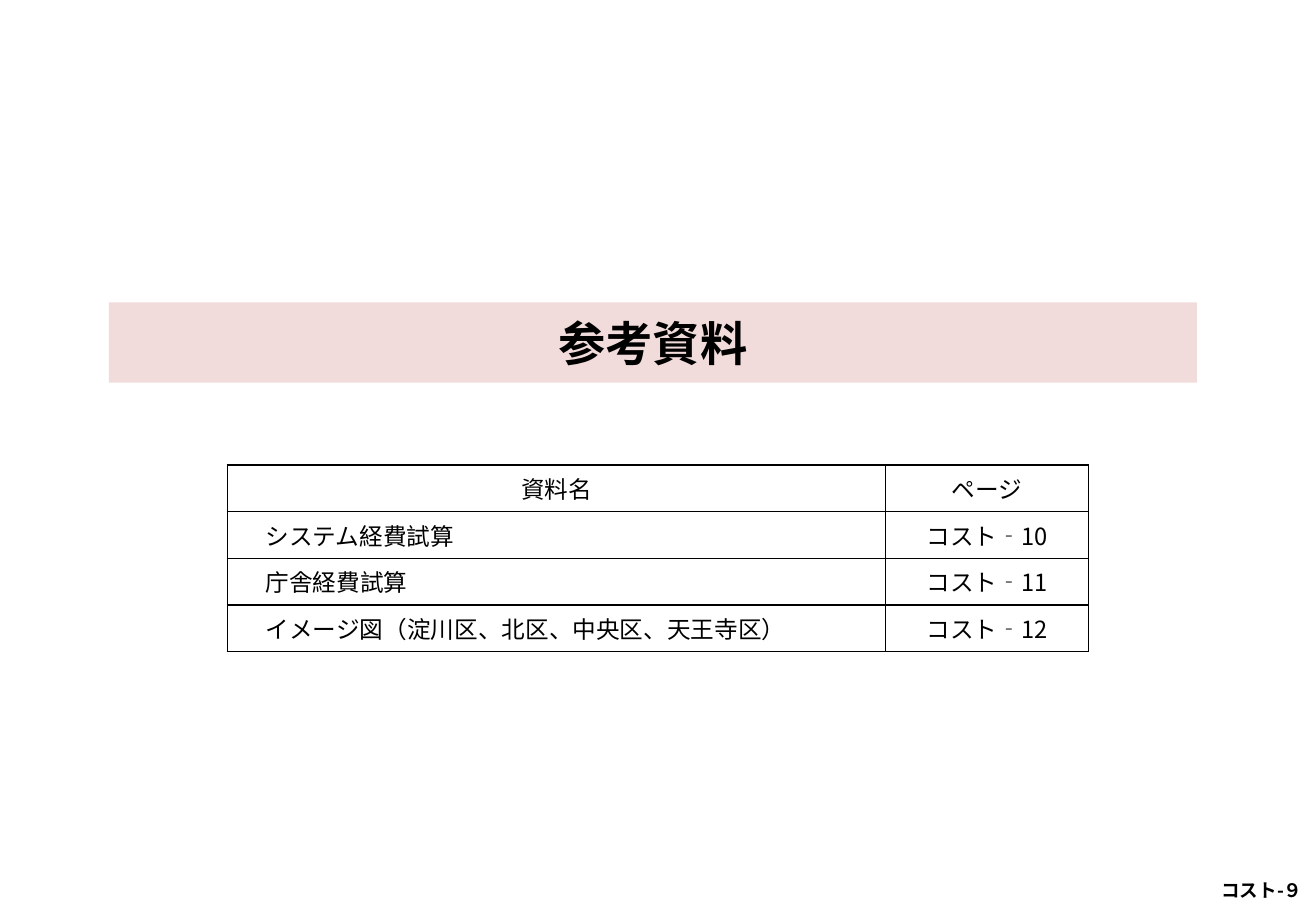
from dataclasses import dataclass

from lxml import etree
from pptx import Presentation
from pptx.dml.color import RGBColor
from pptx.enum import shapes, text
from pptx.oxml.ns import qn
from pptx.util import Pt


@dataclass(frozen=True)
class Theme:
    font: str = "Noto Sans CJK JP"
    ink: str = "000000"
    band: str = "F2DCDB"
    title: int = 28
    body: int = 14
    foot: int = 11


THEME = Theme()
LEFT, MID, RIGHT = text.PP_ALIGN.LEFT, text.PP_ALIGN.CENTER, text.PP_ALIGN.RIGHT
ROWS = [
    ("資料名", "ページ"),
    ("システム経費試算", "コスト‐10"),
    ("庁舎経費試算", "コスト‐11"),
    ("イメージ図（淀川区、北区、中央区、天王寺区）", "コスト‐12"),
]


def write(frame, words, size, align, bold=False):
    para = frame.paragraphs[0]
    para.text = words
    para.alignment = align
    font = para.font
    font.size, font.bold, font.name = Pt(size), bold, THEME.font
    font.color.rgb = RGBColor.from_string(THEME.ink)
    props = para._p.pPr.find(qn("a:defRPr"))
    etree.SubElement(props, qn("a:ea"), typeface=THEME.font)


def border(cell):
    props = cell._tc.get_or_add_tcPr()
    for spot, side in enumerate(("lnL", "lnR", "lnT", "lnB")):
        line = etree.Element(qn(f"a:{side}"), w=str(Pt(1)))
        fill = etree.SubElement(line, qn("a:solidFill"))
        etree.SubElement(fill, qn("a:srgbClr"), val=THEME.ink)
        props.insert(spot, line)


def add_band(slide, words, left, top, width, height):
    band = slide.shapes.add_shape(
        shapes.MSO_SHAPE.RECTANGLE, Pt(left), Pt(top), Pt(width), Pt(height))
    band.shadow.inherit = False
    band.fill.solid()
    band.fill.fore_color.rgb = RGBColor.from_string(THEME.band)
    band.line.fill.background()
    band.text_frame.vertical_anchor = text.MSO_ANCHOR.MIDDLE
    write(band.text_frame, words, THEME.title, MID, True)


def add_list(slide, rows, left, top, widths, height):
    table = slide.shapes.add_table(
        len(rows), len(widths), Pt(left), Pt(top),
        Pt(sum(widths)), Pt(height * len(rows))).table
    table.first_row = table.horz_banding = False
    for col, width in zip(table.columns, widths):
        col.width = Pt(width)
    for r, row in enumerate(rows):
        table.rows[r].height = Pt(height)
        for c, words in enumerate(row):
            cell = table.cell(r, c)
            entry = r > 0 and c == 0
            cell.fill.background()
            cell.vertical_anchor = text.MSO_ANCHOR.MIDDLE
            cell.margin_left = Pt(22.6 if entry else 8)
            cell.margin_right = Pt(8)
            write(cell.text_frame, words, THEME.body, LEFT if entry else MID)
            border(cell)


def add_foot(slide, words, left, top, width, height):
    box = slide.shapes.add_textbox(Pt(left), Pt(top), Pt(width), Pt(height))
    box.text_frame.word_wrap = True
    box.text_frame.auto_size = text.MSO_AUTO_SIZE.SHAPE_TO_FIT_TEXT
    write(box.text_frame, words, THEME.foot, RIGHT, True)


def main():
    deck = Presentation()
    deck.slide_width, deck.slide_height = Pt(780), Pt(540)
    slide = deck.slides.add_slide(deck.slide_layouts[6])
    add_list(slide, ROWS, 134.8, 275.6, (390.2, 120.2), 27.6)
    add_foot(slide, "コスト-９", 697.7, 517.7, 81.4, 20.2)
    add_band(slide, "参考資料", 64.5, 179.3, 645, 47.5)
    deck.save("out.pptx")


if __name__ == "__main__":
    main()
